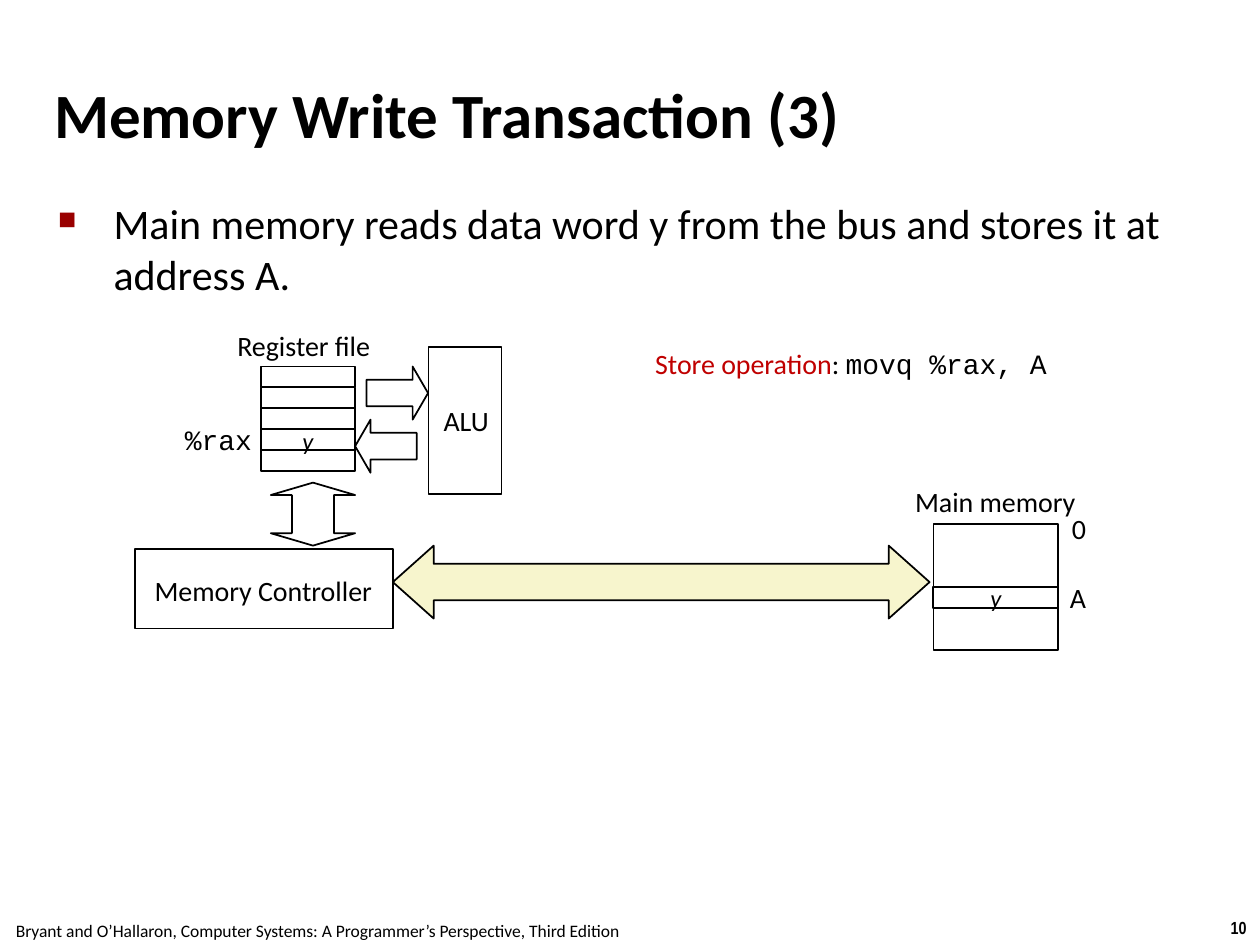
from lxml.etree import SubElement
from pptx import Presentation
from pptx.dml.color import RGBColor
from pptx.enum.shapes import MSO_SHAPE
from pptx.enum.text import MSO_ANCHOR, MSO_AUTO_SIZE, PP_ALIGN
from pptx.oxml.ns import qn
from pptx.util import Cm, Pt

BLACK = "000000"
REGISTER_COUNT = 5
REGISTER_HEIGHT = 0.42


def color(value):
    return RGBColor.from_string(value)


def apply(target, values):
    for name, value in values.items():
        setattr(target, name, value)


def add_span(paragraph, text, size, font="Calibri", ink=BLACK, **styles):
    span = paragraph.add_run()
    span.text = text
    apply(span.font, {"name": font, "size": Pt(size), **styles})
    span.font.color.rgb = color(ink)


def add_box(page, place, inset, **frame_values):
    box = page.shapes.add_textbox(*map(Cm, place))
    margins = {f"margin_{side}": Cm(inset) for side in ("left", "right", "top", "bottom")}
    apply(box.text_frame, {"word_wrap": True, **margins, **frame_values})
    return box.text_frame.paragraphs[0]


def add_label(page, place, text, size=16, inset=0.13, anchor=MSO_ANCHOR.MIDDLE, **styles):
    paragraph = add_box(page, place, inset, word_wrap=False, vertical_anchor=anchor,
                        auto_size=MSO_AUTO_SIZE.SHAPE_TO_FIT_TEXT)
    paragraph.alignment = PP_ALIGN.CENTER
    add_span(paragraph, text, size, **styles)
    return paragraph


def paint(shape, fill=None):
    shape.shadow.inherit = False
    if fill:
        shape.fill.solid()
        shape.fill.fore_color.rgb = color(fill)
    else:
        shape.fill.background()
    shape.line.color.rgb = color(BLACK)
    shape.line.width = Pt(1)


def add_block(page, place, kind=MSO_SHAPE.RECTANGLE, fill=None, adjustments=()):
    shape = page.shapes.add_shape(kind, *map(Cm, place))
    for index, value in enumerate(adjustments):
        shape.adjustments[index] = value
    paint(shape, fill)


def add_vertical_arrow(page, left, top, width, height, head):
    right, bottom, center = left + width, top + height, left + width / 2
    shaft_left, shaft_right = left + width / 4, right - width / 4
    neck, base = top + head, bottom - head
    points = [(left, neck), (center, top), (right, neck), (shaft_right, neck),
              (shaft_right, base), (right, base), (center, bottom), (left, base),
              (shaft_left, base), (shaft_left, neck)]
    start, *others = [(Cm(x), Cm(y)) for x, y in points]
    builder = page.shapes.build_freeform(*start)
    builder.add_line_segments(others, close=True)
    paint(builder.convert_to_shape())


def add_bullet(paragraph, symbol, ink, percent, indent):
    properties = paragraph._p.get_or_add_pPr()
    properties.set("marL", str(Cm(indent)))
    properties.set("indent", str(-Cm(indent)))
    tint = SubElement(properties, qn("a:buClr"))
    SubElement(tint, qn("a:srgbClr"), val=ink)
    SubElement(properties, qn("a:buSzPct"), val=str(percent * 1000))
    SubElement(properties, qn("a:buChar"), char=symbol)


def add_heading(page):
    title = add_box(page, (0.99, 1.22, 21.08, 2.11), 0.1, vertical_anchor=MSO_ANCHOR.MIDDLE)
    add_span(title, "Memory Write Transaction (3)", 36, bold=True)
    body = add_box(page, (1.07, 3.89, 23.29, 15.09), 0.1)
    body.space_before = Pt(6)
    add_bullet(body, "■", "990000", 60, 1.12)
    add_span(body, "Main memory reads data word y from the bus and stores it at address A.", 24)


def add_processor(page):
    for row in range(REGISTER_COUNT):
        add_block(page, (5.26, 7.39 + row * REGISTER_HEIGHT, 1.9, REGISTER_HEIGHT))
    add_label(page, (5.94, 8.48, 0.53, 0.79), "y", 14, italic=True)
    add_label(page, (4.6, 6.55, 3.05, 0.84), "Register file")
    add_label(page, (3.58, 8.41, 1.65, 0.89), "%rax", font="Courier New")
    for kind, left, top in ((MSO_SHAPE.RIGHT_ARROW, 7.39, 7.39),
                            (MSO_SHAPE.LEFT_ARROW, 7.16, 8.46)):
        add_block(page, (left, top, 1.24, 1.07), kind, adjustments=(0.5, 0.29))
    add_block(page, (8.64, 6.99, 1.47, 2.97))
    add_label(page, (8.79, 8.05, 1.22, 0.84), "ALU")
    add_vertical_arrow(page, 5.46, 9.73, 1.7, 1.27, 0.25)
    add_block(page, (2.72, 11.07, 5.21, 1.6), fill="FFFFFF")
    add_label(page, (2.92, 11.48, 4.78, 0.84), "Memory Controller")


def add_memory(page):
    add_block(page, (18.82, 10.57, 2.51, 2.54))
    add_block(page, (7.92, 11, 10.82, 1.47), MSO_SHAPE.LEFT_RIGHT_ARROW, "F7F5CD", (0.5, 0.56))
    add_block(page, (18.81, 11.84, 2.53, 0.42))
    add_label(page, (19.81, 11.66, 0.53, 0.79), "y", 14, italic=True)
    add_label(page, (18.26, 9.68, 3.61, 0.84), "Main memory")
    add_label(page, (21.46, 10.24, 0.58, 0.84), "0")
    add_label(page, (21.41, 11.63, 0.64, 0.84), "A")


def add_operation(page):
    paragraph = add_label(page, (13, 6.86, 8.31, 1.65), "Store operation",
                          anchor=MSO_ANCHOR.TOP, ink="C00000")
    add_span(paragraph, ": ", 16)
    add_span(paragraph, "movq %rax, A", 16, font="Courier New")


def add_footer(page):
    add_label(page, (24.54, 18.36, 0.86, 0.69), "10", 10, font="Arial Narrow", bold=True)
    add_label(page, (-0.05, 18.42, 12.9, 0.69),
              "Bryant and O’Hallaron, Computer Systems: A Programmer’s Perspective, Third Edition", 10)


def main():
    deck = Presentation()
    apply(deck, {"slide_width": Cm(25.4), "slide_height": Cm(19.05)})
    page = deck.slides.add_slide(deck.slide_layouts[6])
    for add_part in (add_footer, add_heading, add_memory, add_processor, add_operation):
        add_part(page)
    deck.save("out.pptx")


if __name__ == "__main__":
    main()
